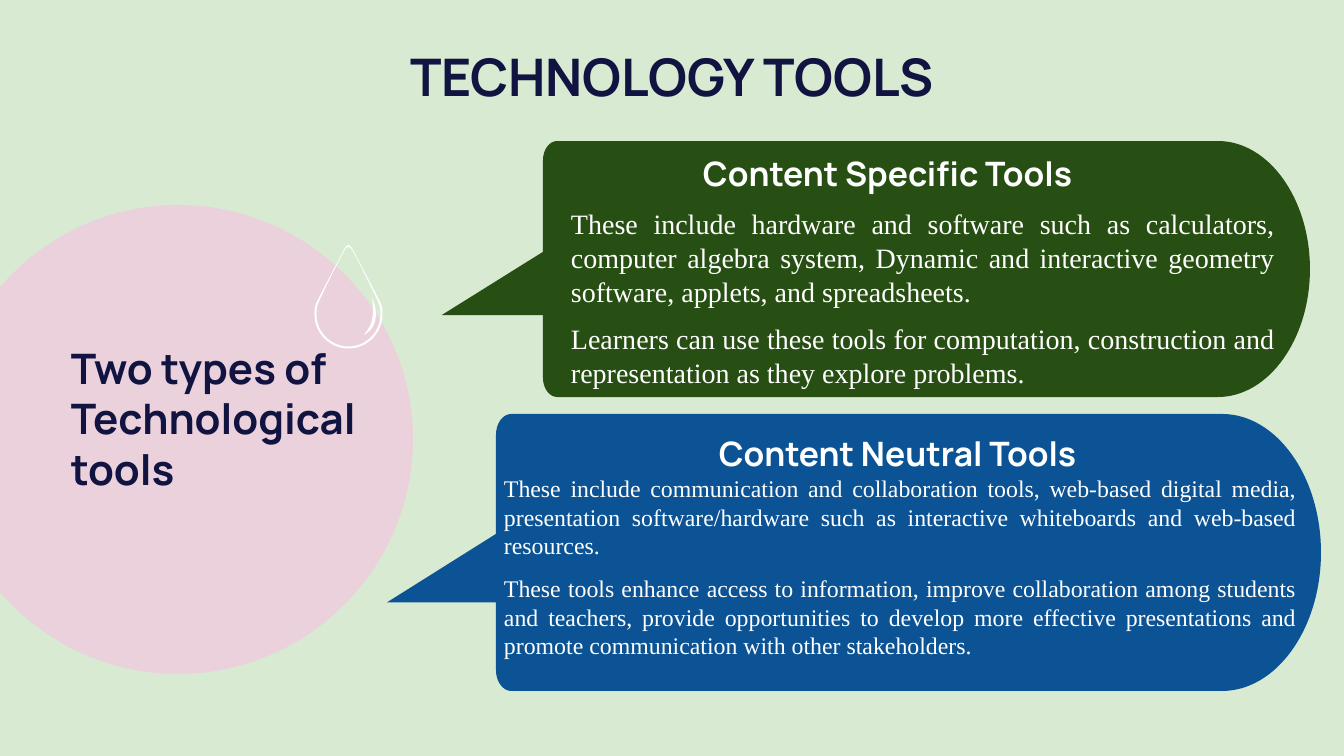
"""Builds the slide on two types of technology tools."""
from lxml import etree
from pptx import Presentation
from pptx.dml.color import RGBColor
from pptx.enum.text import MSO_ANCHOR as ANCHOR, MSO_AUTO_SIZE as AUTOSIZE, PP_ALIGN as ALIGN
from pptx.oxml.ns import qn
from pptx.util import Pt

PX = 914400 / 100.8
MINT = RGBColor(0xD9, 0xEA, 0xD3)
PINK = RGBColor(0xEA, 0xD1, 0xDC)
GREEN = RGBColor(0x27, 0x4E, 0x13)
BLUE = RGBColor(0x0B, 0x53, 0x94)
NAVY = RGBColor(0x11, 0x13, 0x40)
WHITE = RGBColor(0xFF, 0xFF, 0xFF)
HEADING_FONT, BODY_FONT = "Manrope", "Times New Roman"

TITLE = "TECHNOLOGY TOOLS"
TOPIC = "Two types of Technological tools"
TOOL_TYPES = [
    dict(
        heading="Content Specific Tools", heading_box=(626, 150, 523, 45),
        body=[
            "These include hardware and software such as calculators, computer algebra system, "
            "Dynamic and interactive geometry software, applets, and spreadsheets.",
            "Learners can use these tools for computation, construction and representation "
            "as they explore problems.",
        ],
        body_box=(541, 205, 739, 210), size=20, indent=25,
        callout=(543, 141, 767, 256), color=GREEN,
    ),
    dict(
        heading="Content Neutral Tools", heading_box=(630, 430, 535, 45),
        body=[
            "These include communication and collaboration tools, web-based digital media, "
            "presentation software/hardware such as interactive whiteboards and web-based resources.",
            "These tools enhance access to information, improve collaboration among students "
            "and teachers, provide opportunities to develop more effective presentations and "
            "promote communication with other stakeholders.",
        ],
        body_box=(499, 472, 803, 220), size=17, indent=0,
        callout=(496, 414, 825, 277), color=BLUE,
    ),
]
GLINT = [[(372, 297)], [(372, 297), (385, 324), (364, 335)], [(364, 335), (368, 330), (371, 324)],
         [(375, 311), (372, 297), (372, 297)]]


def px(length):
    return round(length * PX)


def bend(start, corner, end):
    """Curve step for a quarter ellipse that rounds off a corner."""
    controls = [tuple(p + 0.55 * (c - p) for p, c in zip(point, corner)) for point in (start, end)]
    return [*controls, end]


def add_outline(slide, contours, fill):
    """Draw contours made of steps: one point is a line, three points are a curve."""
    builder = None
    for contour in contours:
        points = [(px(x), px(y)) for step in contour for x, y in step]
        if builder is None:
            builder = slide.shapes.build_freeform(*points[0])
        else:
            builder.move_to(*points[0])
        builder.add_line_segments(points[1:], close=True)
    shape = builder.convert_to_shape()
    lines = iter(list(shape._element.iter(qn("a:lnTo"))))
    for step in (step for contour in contours for step in contour[1:]):
        group = [next(lines) for _ in step]
        if len(group) == 3:
            curve = etree.Element(qn("a:cubicBezTo"))
            group[0].addprevious(curve)
            for line in group:
                curve.append(line[0])
                line.getparent().remove(line)
    shape.shadow.inherit = False
    shape.fill.solid()
    shape.fill.fore_color.rgb = fill
    shape.line.fill.background()


def circle_contour():
    top, middle, bottom = 205, 439, 674
    center, right = 178, 413
    return [
        [(center, bottom)],
        bend((center, bottom), (right, bottom), (right, middle)),
        bend((right, middle), (right, top), (center, top)),
        [(107, top), (43, 237), (0, 287)],
        [(0, 592)],
        [(43, 642), (107, bottom), (center, bottom)],
    ]


def callout_contour(left, top, width, height):
    right, bottom, middle = left + width, top + height, top + height / 2
    nose = right - 0.12 * width
    corner_x, corner_y = 0.0185 * width, 0.075 * height
    tip_y = top + 0.68 * height
    return [
        [(nose, top)],
        [(left + corner_x, top)],
        bend((left + corner_x, top), (left, top), (left, top + corner_y)),
        [(left, top + 0.433 * height)],
        [(left - 0.132 * width, tip_y)],
        [(left, tip_y)],
        [(left, bottom - corner_y)],
        bend((left, bottom - corner_y), (left, bottom), (left + corner_x, bottom)),
        [(nose, bottom)],
        bend((nose, bottom), (right, bottom), (right, middle)),
        bend((right, middle), (right, top), (nose, top)),
    ]


def drop_contour(inset):
    center, middle, shoulder_y, neck_y = 348.5, 314.5, 304, 248
    top, bottom = 245 + inset, 348.5 - inset
    left, right = center - 34 + inset, center + 34 - inset
    shoulder, neck = 32.5 - inset, 3.5 - inset / 2
    return [
        [(center, top)],
        [(center + 1, top), (center + 2, top + 1), (center + neck, neck_y)],
        [(center + 12, 264), (center + shoulder - 1, shoulder_y - 3), (center + shoulder, shoulder_y)],
        [(right, 307), (right, 311), (right, middle)],
        bend((right, middle), (right, bottom), (center, bottom)),
        bend((center, bottom), (left, bottom), (left, middle)),
        [(left, 311), (left, 307), (center - shoulder, shoulder_y)],
        [(center - shoulder + 1, shoulder_y - 3), (center - 12, 264), (center - neck, neck_y)],
        [(center - 2, top + 1), (center - 1, top), (center, top)],
    ]


def add_text(slide, paragraphs, box, size, font=HEADING_FONT, color=WHITE, bold=True,
             align=ALIGN.CENTER, anchor=ANCHOR.BOTTOM, indent=0):
    frame = slide.shapes.add_textbox(*map(px, box)).text_frame
    frame.word_wrap = True
    frame.auto_size = AUTOSIZE.SHAPE_TO_FIT_TEXT
    frame.vertical_anchor = anchor
    frame.margin_left = frame.margin_right = px(5)
    frame.margin_top = frame.margin_bottom = px(2)
    for index, text in enumerate(paragraphs):
        paragraph = frame.paragraphs[0] if index == 0 else frame.add_paragraph()
        paragraph.alignment = align
        if index:
            paragraph.space_before = Pt(10)
        if indent:
            properties = paragraph._p.get_or_add_pPr()
            properties.set("marL", str(px(indent)))
            properties.set("indent", "0")
        run = paragraph.add_run()
        run.text = text
        run.font.name = font
        run.font.size = Pt(size)
        run.font.bold = bold
        run.font.color.rgb = color


def main():
    deck = Presentation()
    deck.slide_width, deck.slide_height = px(1344), px(756)
    slide = deck.slides.add_slide(deck.slide_layouts[6])
    slide.background.fill.solid()
    slide.background.fill.fore_color.rgb = MINT

    add_outline(slide, [circle_contour()], PINK)
    for tool in TOOL_TYPES:
        add_outline(slide, [callout_contour(*tool["callout"])], tool["color"])

    add_text(slide, [TITLE], (84, 41, 1176, 68), 37, color=NAVY)
    add_text(slide, [TOPIC], (66, 339, 376, 158), 30, color=NAVY,
             align=ALIGN.LEFT, anchor=ANCHOR.MIDDLE)
    for tool in TOOL_TYPES:
        add_text(slide, [tool["heading"]], tool["heading_box"], 24)
        add_text(slide, tool["body"], tool["body_box"], tool["size"], font=BODY_FONT, bold=False,
                 align=ALIGN.JUSTIFY, anchor=ANCHOR.TOP, indent=tool["indent"])

    add_outline(slide, [GLINT, drop_contour(2), drop_contour(0)], WHITE)
    deck.save("out.pptx")


if __name__ == "__main__":
    main()
